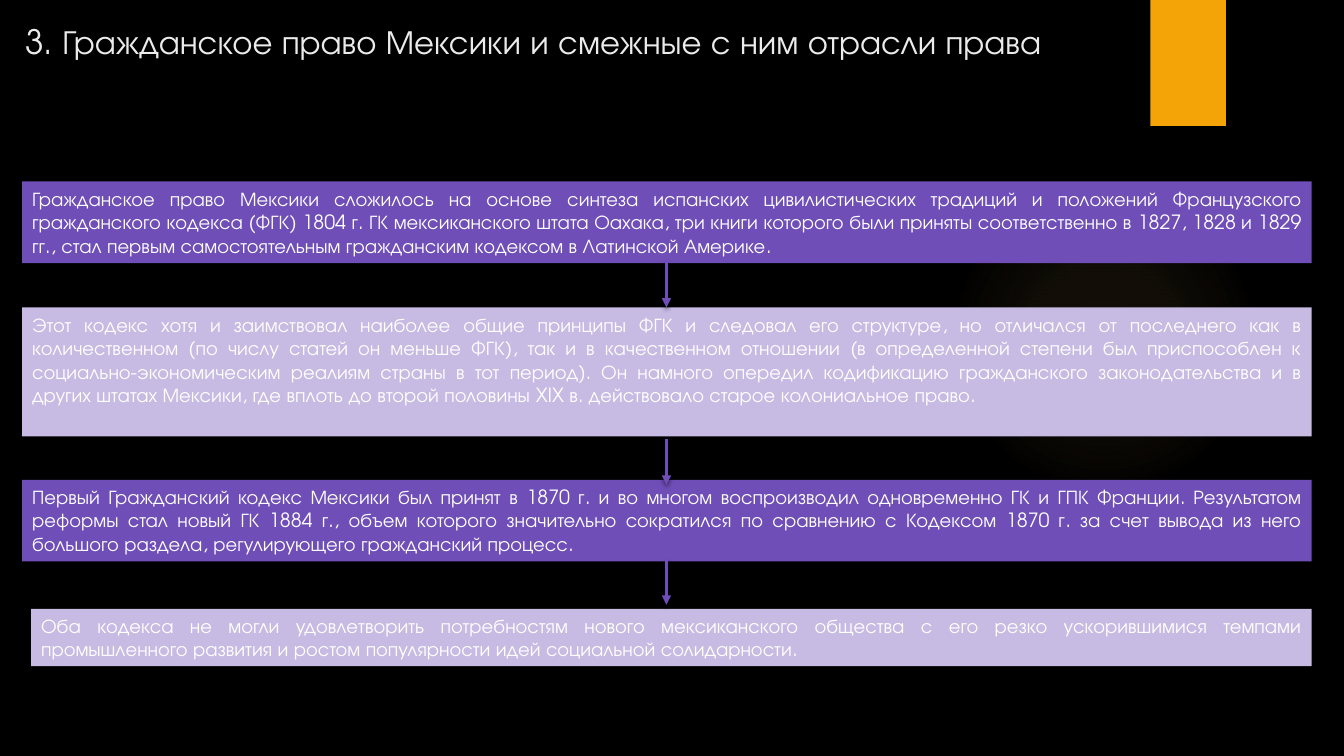
from lxml import etree
from pptx import Presentation
from pptx.dml.color import RGBColor
from pptx.enum.shapes import MSO_CONNECTOR, MSO_SHAPE
from pptx.enum.text import MSO_ANCHOR, PP_ALIGN
from pptx.oxml import parse_xml
from pptx.oxml.ns import qn
from pptx.util import Inches, Pt

RECTANGLE = MSO_SHAPE.RECTANGLE
OVAL = MSO_SHAPE.OVAL
STRAIGHT = MSO_CONNECTOR.STRAIGHT
TOP = MSO_ANCHOR.TOP
JUSTIFY = PP_ALIGN.JUSTIFY

FONT = "TeX Gyre Adventor"
NAMESPACE = "http://schemas.openxmlformats.org/drawingml/2006/main"
COLORS = {
    "background": "000000",
    "glow": "FAC96A",
    "accent": "F5A408",
    "title": "EBEBEB",
    "text": "FFFFFF",
    "dark": "6F4EB7",
    "light": "C7BAE3",
    "shadow": "000000",
}

TITLE = "3. Гражданское право Мексики и смежные с ним отрасли права"
STEPS = [
    (0.22, 1.8, 0.81, "dark",
     "Гражданское право Мексики сложилось на основе синтеза испанских "
     "цивилистических традиций и положений Французского гражданского кодекса "
     "(ФГК) 1804 г. ГК мексиканского штата Оахака, три книги которого были "
     "приняты соответственно в 1827, 1828 и 1829 гг., стал первым "
     "самостоятельным гражданским кодексом в Латинской Америке."),
    (0.22, 3.05, 1.28, "light",
     "Этот кодекс хотя и заимствовал наиболее общие принципы ФГК и следовал "
     "его структуре, но отличался от последнего как в количественном (по числу "
     "статей он меньше ФГК), так и в качественном отношении (в определенной "
     "степени был приспособлен к социально-экономическим реалиям страны в тот "
     "период). Он намного опередил кодификацию гражданского законодательства "
     "и в других штатах Мексики, где вплоть до второй половины XIX в. "
     "действовало старое колониальное право."),
    (0.22, 4.76, 0.81, "dark",
     "Первый Гражданский кодекс Мексики был принят в 1870 г. и во многом "
     "воспроизводил одновременно ГК и ГПК Франции. Результатом реформы стал "
     "новый ГК 1884 г., объем которого значительно сократился по сравнению с "
     "Кодексом 1870 г. за счет вывода из него большого раздела, регулирующего "
     "гражданский процесс."),
    (0.31, 6.04, 0.57, "light",
     "Оба кодекса не могли удовлетворить потребностям нового мексиканского "
     "общества с его резко ускорившимися темпами промышленного развития и "
     "ростом популярности идей социальной солидарности."),
]
STEP_RIGHT = 13.01
ARROW_X = 6.61
ARROW_LENGTH = 0.45
ARROW_TOPS = [2.6, 4.36, 5.55]


def rgb(name):
    return RGBColor.from_string(COLORS[name])


def write_text(shape, text, size, color):
    frame = shape.text_frame
    frame.word_wrap = True
    frame.vertical_anchor = TOP
    para = frame.paragraphs[0]
    para.alignment = JUSTIFY
    span = para.add_run()
    span.text = text
    span.font.name = FONT
    span.font.size = Pt(size)
    span.font.color.rgb = rgb(color)


def add_block(slide, kind, left, top, width, height, color):
    block = slide.shapes.add_shape(
        kind, Inches(left), Inches(top), Inches(width), Inches(height))
    block.shadow.inherit = False
    block.fill.solid()
    block.fill.fore_color.rgb = rgb(color)
    block.line.fill.background()
    return block


def set_shadow(properties):
    for effects in properties.findall(qn("a:effectLst")):
        properties.remove(effects)
    properties.append(parse_xml(
        f'<a:effectLst xmlns:a="{NAMESPACE}">'
        f'<a:outerShdw blurRad="{Pt(3)}" dist="{Pt(2)}" dir="5400000" rotWithShape="0">'
        f'<a:srgbClr val="{COLORS["shadow"]}"><a:alpha val="45000"/></a:srgbClr>'
        '</a:outerShdw></a:effectLst>'))


def add_glow(slide):
    glow = add_block(slide, OVAL, 9.41, 1.83, 3.08, 3.08, "glow")
    stops = "".join(
        f'<a:gs pos="{position * 1000}"><a:srgbClr val="{COLORS["glow"]}">'
        f'<a:alpha val="{opacity * 1000}"/></a:srgbClr></a:gs>'
        for position, opacity in [(0, 7), (36, 6), (69, 0)])
    gradient = parse_xml(
        f'<a:gradFill xmlns:a="{NAMESPACE}"><a:gsLst>{stops}</a:gsLst>'
        '<a:path path="circle">'
        '<a:fillToRect l="50000" t="50000" r="50000" b="50000"/>'
        '</a:path></a:gradFill>')
    properties = glow.element.spPr
    properties.replace(properties.find(qn("a:solidFill")), gradient)


def add_arrow(slide, top):
    arrow = slide.shapes.add_connector(
        STRAIGHT, Inches(ARROW_X), Inches(top),
        Inches(ARROW_X), Inches(top + ARROW_LENGTH))
    arrow.line.color.rgb = rgb("dark")
    arrow.line.width = Pt(2.25)
    properties = arrow.element.spPr
    etree.SubElement(properties.find(qn("a:ln")), qn("a:tailEnd"), type="triangle")
    set_shadow(properties)


def place_title(slide):
    title = slide.shapes.title
    title.left, title.top = Inches(0.15), Inches(0.16)
    title.width, title.height = Inches(11.17), Inches(0.99)
    write_text(title, TITLE, size=24, color="title")


def main():
    deck = Presentation()
    deck.slide_width, deck.slide_height = Inches(13.33), Inches(7.5)
    slide = deck.slides.add_slide(deck.slide_layouts[5])
    slide.background.fill.solid()
    slide.background.fill.fore_color.rgb = rgb("background")

    add_glow(slide)
    ribbon = add_block(slide, RECTANGLE, 11.41, 0, 0.75, 1.25, "accent")
    set_shadow(ribbon.element.spPr)
    place_title(slide)
    for left, top, height, color, text in STEPS:
        box = add_block(slide, RECTANGLE, left, top, STEP_RIGHT - left, height, color)
        write_text(box, text, size=14, color="text")
    for top in ARROW_TOPS:
        add_arrow(slide, top)
    deck.save("out.pptx")


if __name__ == "__main__":
    main()
